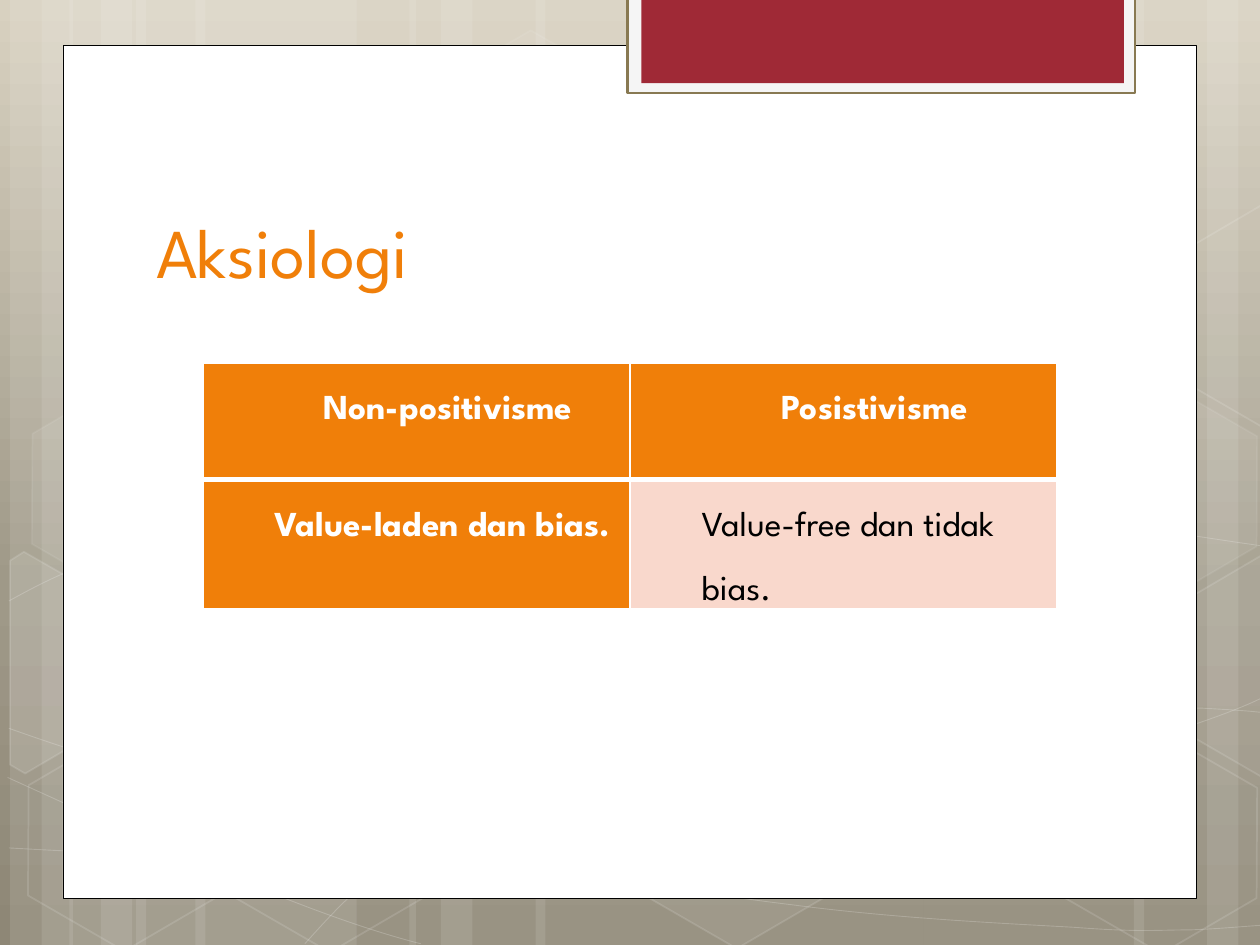
from copy import deepcopy

from lxml import etree
from pptx import Presentation
from pptx.dml.color import RGBColor
from pptx.enum.shapes import MSO_SHAPE
from pptx.enum.text import MSO_ANCHOR, MSO_AUTO_SIZE, PP_ALIGN
from pptx.oxml.ns import qn
from pptx.util import Inches, Pt

RECT, HEXAGON = MSO_SHAPE.RECTANGLE, MSO_SHAPE.HEXAGON
LEFT, CENTER = PP_ALIGN.LEFT, PP_ALIGN.CENTER
COLUMNS, ROWS = 10, 7.5
FONT = "League Spartan"
COLORS = {
    "white": "FFFFFF", "black": "000000", "orange": "F07F09", "pink": "F9D8CC",
    "red": "9F2936", "tab": "F5F5F5", "tab edge": "887952",
    "sky": "D8D1C0", "middle": "9F9988", "ground": "8E8776",
}

# Each curve is a start point followed by cubic segments of three points.
CURVES = [
    [(0.07, 6.73), (0.61, 6.76), (1.15, 6.79), (1.9, 6.78), (2.65, 6.77), (3.58, 6.75),
     (4.58, 6.65), (5.58, 6.55), (7, 6.36), (7.92, 6.17), (8.83, 5.98), (9.77, 5.68),
     (10.07, 5.51)],
    [(0.07, 4.77), (0.36, 4.61), (0.65, 4.46), (1.21, 4.31), (1.78, 4.16), (2.59, 3.94),
     (3.47, 3.87), (4.36, 3.8), (5.44, 3.79), (6.54, 3.87), (7.64, 3.95), (9.47, 4.26),
     (10.07, 4.34)],
    [(0.06, 6.17), (1.27, 6.72), (2.47, 7.27), (3.34, 7.49)],
    [(0.07, 5.78), (0.38, 5.89), (0.7, 6), (1.28, 6.16), (1.86, 6.31), (2.73, 6.56),
     (3.57, 6.73), (4.4, 6.9), (5.45, 7.08), (6.28, 7.18), (7.11, 7.29), (8, 7.33),
     (8.53, 7.36), (9.05, 7.4), (9.19, 7.38), (9.45, 7.38), (9.71, 7.37), (9.89, 7.35),
     (10.07, 7.34)],
    [(2.42, 7.49), (2.6, 7.29), (2.78, 7.09), (3.02, 6.91), (3.26, 6.73), (3.6, 6.53),
     (3.88, 6.39), (4.16, 6.25), (4.33, 6.19), (4.7, 6.09), (5.06, 5.99), (5.73, 5.85),
     (6.08, 5.78), (6.44, 5.71), (6.49, 5.71), (6.8, 5.69), (7.11, 5.66), (7.6, 5.63),
     (7.94, 5.62), (8.29, 5.61), (8.86, 5.62), (8.86, 5.62), (8.86, 5.62), (9.53, 5.62),
     (9.53, 5.62), (9.71, 5.63), (9.88, 5.64), (9.97, 5.65), (10.06, 5.66), (10.03, 5.65),
     (10.06, 5.66)],
]
# Left, top, fill opacity, line opacity
HEXAGONS = [
    (3.34, 0.36, 4, 8), (4.97, 5.89, 6, 12), (0.11, 5.91, 0, 12), (0.14, 3.12, 7, 8),
    (1.74, 5.92, 0, 12), (7.53, 4.53, 10, 12), (8.34, 5.93, 0, 12), (8.34, 3.14, 7, 8),
]
# Outline points, fill opacity
CUT_HEXAGONS = [
    ([(0.08, 4.45), (0.19, 4.38), (0.96, 4.82), (0.95, 5.7), (0.2, 6.14), (0.08, 6.07)], 10),
    ([(9.26, 4.85), (10.01, 4.41), (10.09, 4.46), (10.09, 6.13), (10.02, 6.17), (9.26, 5.73)], 4),
    ([(9.26, 2.07), (10.01, 1.63), (10.1, 1.68), (10.09, 3.35), (10.02, 3.39), (9.26, 2.95)], 0),
]
# Text, alignment, fill, font colour, bold
COMPARISON = [
    [("Non-positivisme", CENTER, "orange", "white", True),
     ("Posistivisme", CENTER, "orange", "white", True)],
    [("Value-laden dan bias.", LEFT, "orange", "white", True),
     ("Value-free dan tidak bias.", LEFT, "pink", "black", False)],
]


def rgb(name):
    return RGBColor.from_string(COLORS[name])


class SlideBuilder:
    def __init__(self, prs):
        self.slide = prs.slides.add_slide(prs.slide_layouts[5])
        self.shapes = self.slide.shapes
        self.column = prs.slide_width / COLUMNS
        self.row = prs.slide_height / ROWS

    def place(self, left, top, width, height):
        return [round(v * unit) for v, unit in
                zip((left, top, width, height), (self.column, self.row) * 2)]

    def background(self, stops):
        fill = self.slide.background.fill
        fill.gradient()
        fill.gradient_angle = 270
        stop_list = self.slide.element.find(".//" + qn("a:gsLst"))
        stop_list.insert(1, deepcopy(stop_list[0]))
        for stop, (position, color) in zip(fill.gradient_stops, stops):
            stop.position = position
            stop.color.rgb = rgb(color)

    def paint(self, shape, fill=None, opacity=100, line=None, weight=1, line_opacity=100):
        shape.shadow.inherit = False
        for target, color, share, where in (
                (shape.fill, fill, opacity, "./a:solidFill/a:srgbClr"),
                (shape.line.fill, line, line_opacity, "./a:ln/a:solidFill/a:srgbClr")):
            if not color or not share:
                target.background()
                continue
            target.solid()
            target.fore_color.rgb = rgb(color)
            if share < 100:
                node = shape.element.spPr.xpath(where)[0]
                etree.SubElement(node, qn("a:alpha"), val=str(share * 1000))
        if line:
            shape.line.width = Pt(weight)

    def preset(self, kind, box, **style):
        shape = self.shapes.add_shape(kind, *self.place(*box))
        self.paint(shape, **style)
        return shape

    def hexagon(self, left, top, opacity, line_opacity):
        shape = self.preset(HEXAGON, (left, top, 1.75, 1.52), fill="white", opacity=opacity,
                            line="white", line_opacity=line_opacity)
        shape.rotation = 30
        shape.adjustments[0] = 0.285

    def outline(self, points, close, **style):
        spots = [(round(x * self.column), round(y * self.row)) for x, y in points]
        builder = self.shapes.build_freeform(*spots[0])
        builder.add_line_segments(spots[1:], close=close)
        shape = builder.convert_to_shape()
        self.paint(shape, **style)
        return shape

    def curve(self, points, **style):
        """Draw an open outline whose points after the first form cubic segments."""
        shape = self.outline(points, False, **style)
        drawn = shape.element.find(".//" + qn("a:path"))
        steps = drawn.findall(qn("a:lnTo"))
        for i in range(0, len(steps), 3):
            segment = etree.SubElement(drawn, qn("a:cubicBezTo"))
            for step in steps[i:i + 3]:
                segment.append(step[0])
                drawn.remove(step)

    def format_font(self, font, color, **values):
        for name, value in {"name": FONT, **values}.items():
            setattr(font, name, value)
        font.color.rgb = rgb(color)

    def title(self, text, box):
        title = self.shapes.title
        title.element.getparent().append(title.element)
        title.left, title.top, title.width, title.height = self.place(*box)
        frame = title.text_frame
        frame.text = text
        frame.auto_size = MSO_AUTO_SIZE.NONE
        frame.vertical_anchor = MSO_ANCHOR.BOTTOM
        frame.paragraphs[0].alignment = LEFT
        self.format_font(frame.paragraphs[0].runs[0].font, "orange", size=Pt(40))

    def table(self, rows, box):
        frame = self.shapes.add_table(len(rows), len(rows[0]), *self.place(*box))
        for r, row in enumerate(rows):
            for c, content in enumerate(row):
                self.cell(frame.table.cell(r, c), *content, edge=1 if r else 3)

    def cell(self, cell, text, alignment, fill, color, bold, edge):
        cell.fill.solid()
        cell.fill.fore_color.rgb = rgb(fill)
        margins = {"margin_left": 0.07, "margin_right": 0.07, "margin_top": 0, "margin_bottom": 0}
        for name, value in margins.items():
            setattr(cell, name, Inches(value))
        cell.text = text
        paragraph = cell.text_frame.paragraphs[0]
        paragraph.alignment = alignment
        paragraph.line_spacing = 2.0
        properties = paragraph._p.get_or_add_pPr()
        properties.set("marL", str(Inches(0.5)))
        properties.set("indent", "0")
        self.format_font(paragraph.runs[0].font, color, size=Pt(20), bold=bold)
        cell_properties = cell._tc.get_or_add_tcPr()
        for i, (side, weight) in enumerate({"L": 1, "R": 1, "T": 1, "B": edge}.items()):
            border = etree.Element(qn("a:ln" + side), w=str(Pt(weight)))
            solid = etree.SubElement(border, qn("a:solidFill"))
            etree.SubElement(solid, qn("a:srgbClr"), val=COLORS["white"])
            cell_properties.insert(i, border)


def main():
    prs = Presentation()
    prs.slide_width, prs.slide_height = Inches(10), Inches(7.5)
    page = SlideBuilder(prs)
    page.background([(0, "sky"), (0.62, "middle"), (1, "ground")])

    bands = [(7.33, 1.75), (9.58, 0.5), (9, 0.83)]
    for start, wide in ((0.08, 1.75), (0.55, 1.75), (3.25, 3.08)):
        bands += [(start + 1, wide), (start, 0.5), (start + 0.25, 0.83)]
    for left, width in bands:
        page.preset(RECT, (left, 0, width, ROWS), fill="white", opacity=10)
    for points in CURVES:
        page.curve(points, line="white", weight=0.5, line_opacity=20)
    for hexagon in HEXAGONS:
        page.hexagon(*hexagon)
    for points, opacity in CUT_HEXAGONS:
        page.outline(points, True, fill="white", opacity=opacity, line="white", line_opacity=12)

    page.preset(RECT, (0.5, 0.36, 9, 6.77), fill="white", line="black", weight=0.5)
    page.preset(RECT, (4.98, -0.02, 4.03, 0.76), fill="tab", line="tab edge", weight=1.25)
    page.preset(RECT, (5.09, -0.02, 3.83, 0.68), fill="red")
    page.title("Aksiologi", (1.14, 1.12, 7.68, 1.25))
    page.table(COMPARISON, (1.61, 2.88, 6.78, 1.85))
    prs.save("out.pptx")


if __name__ == "__main__":
    main()
